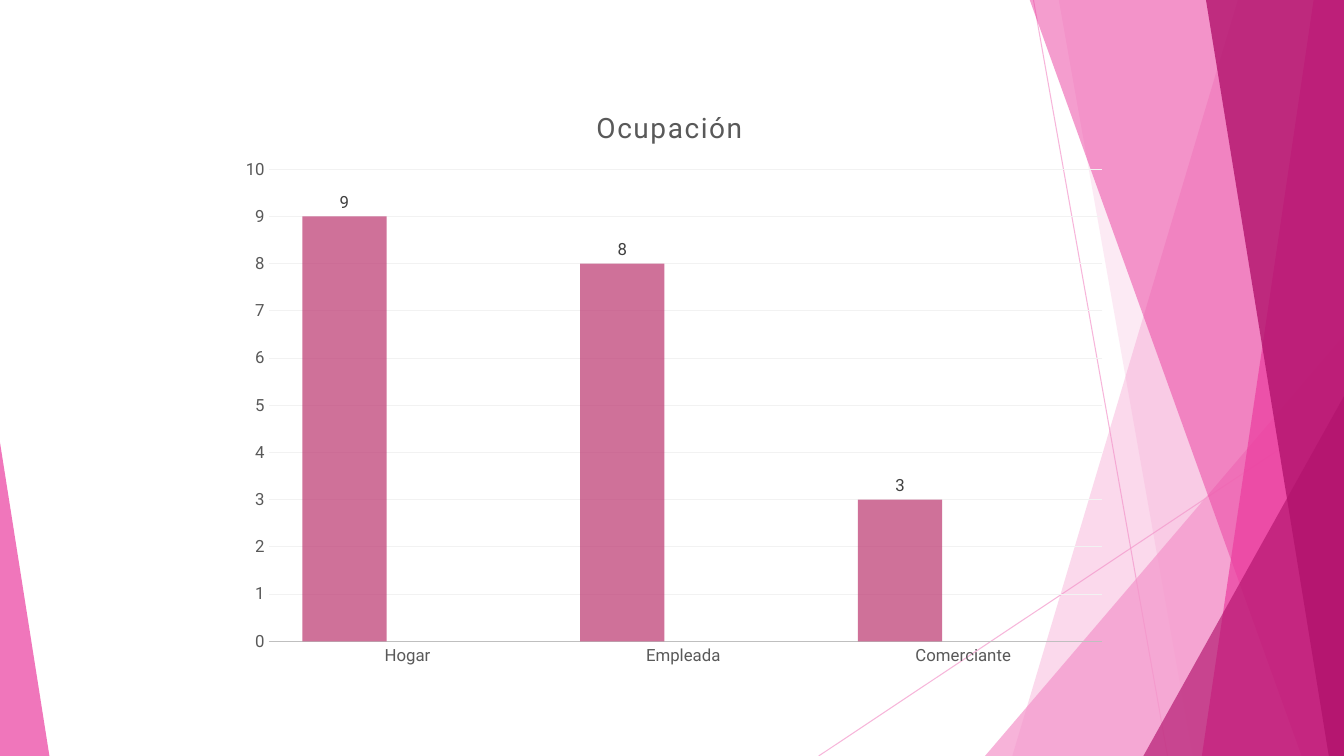
import dataclasses

import pptx
import pptx.chart.data
import pptx.dml.color
import pptx.enum.chart
import pptx.enum.shapes
import pptx.oxml
import pptx.oxml.ns
import pptx.util
from pptx.util import Inches


@dataclasses.dataclass(frozen=True)
class Theme:
    """Colours, type sizes and font of the slide."""
    font: str = "Roboto"
    pale: str = "F496CB"
    pink: str = "EB3D9F"
    deep: str = "B2136D"
    series: tuple = ("BC356F", "F27E19", "BC80E0")
    series_opacity: int = 70
    text: str = "595959"
    label: str = "404040"
    axis: str = "BFBFBF"
    grid: str = "F2F2F2"
    title_size: int = 20
    text_size: int = 12


THEME = Theme()
TOP, RIGHT, BOTTOM = -0.01, 13.33, 7.5


def paint(fill, color, opacity):
    """Fill with a partly transparent colour."""
    fill.solid()
    fill.fore_color.rgb = pptx.dml.color.RGBColor.from_string(color)
    shade = fill._xPr.find(".//" + pptx.oxml.ns.qn("a:srgbClr"))
    shade.append(pptx.oxml.parse_xml(
        f'<a:alpha {pptx.oxml.ns.nsdecls("a")} val="{opacity * 1000}"/>'))


def style_line(line, color, width):
    """Give a line its colour and width."""
    line.color.rgb = pptx.dml.color.RGBColor.from_string(color)
    line.width = pptx.util.Pt(width)


def style_font(font, size, color):
    """Give text the theme font, a size and a colour."""
    font.name = THEME.font
    font.size = pptx.util.Pt(size)
    font.bold = False
    font.color.rgb = pptx.dml.color.RGBColor.from_string(color)


def finish_facet(facet, color, opacity):
    """Paint a background facet without outline or shadow."""
    paint(facet.fill, color, opacity)
    facet.line.fill.background()
    facet.shadow.inherit = False


def add_ray(slide, start, end):
    """Draw a thin background line."""
    ray = slide.shapes.add_connector(
        pptx.enum.shapes.MSO_CONNECTOR.STRAIGHT,
        *(Inches(value) for value in start + end))
    ray.line.width = pptx.util.Pt(0.75)
    paint(ray.line.fill, THEME.pale, 70)
    ray._element.spPr.append(
        pptx.oxml.parse_xml(f'<a:effectLst {pptx.oxml.ns.nsdecls("a")}/>'))


def add_band(slide, top_left, bottom_left, color, opacity):
    """Draw a band from a slanted left edge to the right side of the slide."""
    outline = slide.shapes.build_freeform(
        Inches(top_left), Inches(TOP), scale=1.0)
    corners = [(RIGHT, TOP), (RIGHT, BOTTOM), (bottom_left, BOTTOM)]
    outline.add_line_segments([(Inches(x), Inches(y)) for x, y in corners])
    finish_facet(outline.convert_to_shape(), color, opacity)


def add_corner(slide, left, top, width, apex, color, opacity):
    """Draw a right triangle that stands on the bottom edge."""
    corner = slide.shapes.add_shape(
        pptx.enum.shapes.MSO_SHAPE.ISOSCELES_TRIANGLE,
        Inches(left), Inches(top), Inches(width), Inches(BOTTOM - top))
    corner.adjustments[0] = apex
    finish_facet(corner, color, opacity)


def set_layout(parent, inner=False, **fractions):
    """Place a chart part by fractions of the chart area."""
    for layout in parent.findall(pptx.oxml.ns.qn("c:layout")):
        parent.remove(layout)
    target = '<c:layoutTarget val="inner"/>' if inner else ""
    modes = "".join(f'<c:{key}Mode val="edge"/>' for key in "xy")
    values = "".join(f'<c:{key} val="{value}"/>' for key, value in fractions.items())
    layout = pptx.oxml.parse_xml(
        f'<c:layout {pptx.oxml.ns.nsdecls("c")}><c:manualLayout>'
        f'{target}{modes}{values}</c:manualLayout></c:layout>')
    parent.insert(0 if inner else 1, layout)


def style_title(chart, wording):
    """Write and place the chart title."""
    chart.has_title = True
    title = chart.chart_title
    paragraph = title.text_frame.paragraphs[0]
    paragraph.text = wording
    style_font(paragraph.font, THEME.title_size, THEME.text)
    paragraph.font._element.set("spc", "100")
    set_layout(title._element, x=0.41, y=0.04)


def style_axes(chart):
    """Format both axes and the gridlines."""
    for axis in (chart.category_axis, chart.value_axis):
        axis.major_tick_mark = pptx.enum.chart.XL_TICK_MARK.NONE
        axis.minor_tick_mark = pptx.enum.chart.XL_TICK_MARK.NONE
        style_font(axis.tick_labels.font, THEME.text_size, THEME.text)
    style_line(chart.category_axis.format.line, THEME.axis, 1.25)
    counts = chart.value_axis
    counts.minimum_scale, counts.maximum_scale, counts.major_unit = 0, 10, 1
    counts.format.line.fill.background()
    style_line(counts.major_gridlines.format.line, THEME.grid, 0.75)


def style_series(plot):
    """Colour the columns and label their values."""
    plot.gap_width, plot.overlap = 80, 25
    plot.vary_by_categories = False
    for series, color in zip(plot.series, THEME.series):
        paint(series.format.fill, color, THEME.series_opacity)
        series.format.line.fill.background()
        labels = series.data_labels
        labels.show_value = True
        labels.position = pptx.enum.chart.XL_LABEL_POSITION.OUTSIDE_END
        style_font(labels.font, THEME.text_size, THEME.label)


def add_occupation_chart(slide):
    """Add the column chart of occupations."""
    occupations = pptx.chart.data.CategoryChartData()
    occupations.categories = ["Hogar", "Empleada ", "Comerciante"]
    occupations.add_series("Series 1", (9, 8, 3))
    for name in ("Series 2", "Series 3"):
        occupations.add_series(name, (None, None, None))
    chart = slide.shapes.add_chart(
        pptx.enum.chart.XL_CHART_TYPE.COLUMN_CLUSTERED,
        Inches(2.22), Inches(0.79), Inches(8.89), Inches(5.93), occupations).chart
    chart.has_legend = False
    style_font(chart.font, THEME.text_size, THEME.text)
    style_title(chart, "Ocupación")
    style_axes(chart)
    style_series(chart.plots[0])
    plot_area = chart._chartSpace.chart.plotArea
    set_layout(plot_area, inner=True, x=0.05, y=0.15, w=0.93, h=0.79)


def add_background(slide):
    """Draw the pink facets from back to front."""
    add_ray(slide, (10.25, 0), (11.58, BOTTOM))
    add_ray(slide, (RIGHT, 4.03), (8.12, BOTTOM))
    add_band(slide, 12.28, 10.04, THEME.pale, 36)
    add_band(slide, 10.5, 11.83, THEME.pale, 20)
    add_corner(slide, 9.77, 3.33, 3.56, 1, THEME.pale, 72)
    add_band(slide, 10.21, 12.91, THEME.pink, 50)
    add_band(slide, 13.03, 11.92, THEME.pink, 70)
    add_band(slide, 11.96, 13.18, THEME.deep, 80)
    add_corner(slide, 11.34, 3.93, 1.99, 1, THEME.deep, 66)
    add_corner(slide, 0, 4.39, 0.49, 0, THEME.pink, 70)


def main():
    """Build the slide and save it."""
    deck = pptx.Presentation()
    deck.slide_width, deck.slide_height = Inches(RIGHT), Inches(BOTTOM)
    slide = deck.slides.add_slide(deck.slide_layouts[6])
    add_background(slide)
    add_occupation_chart(slide)
    deck.save("out.pptx")


if __name__ == "__main__":
    main()
